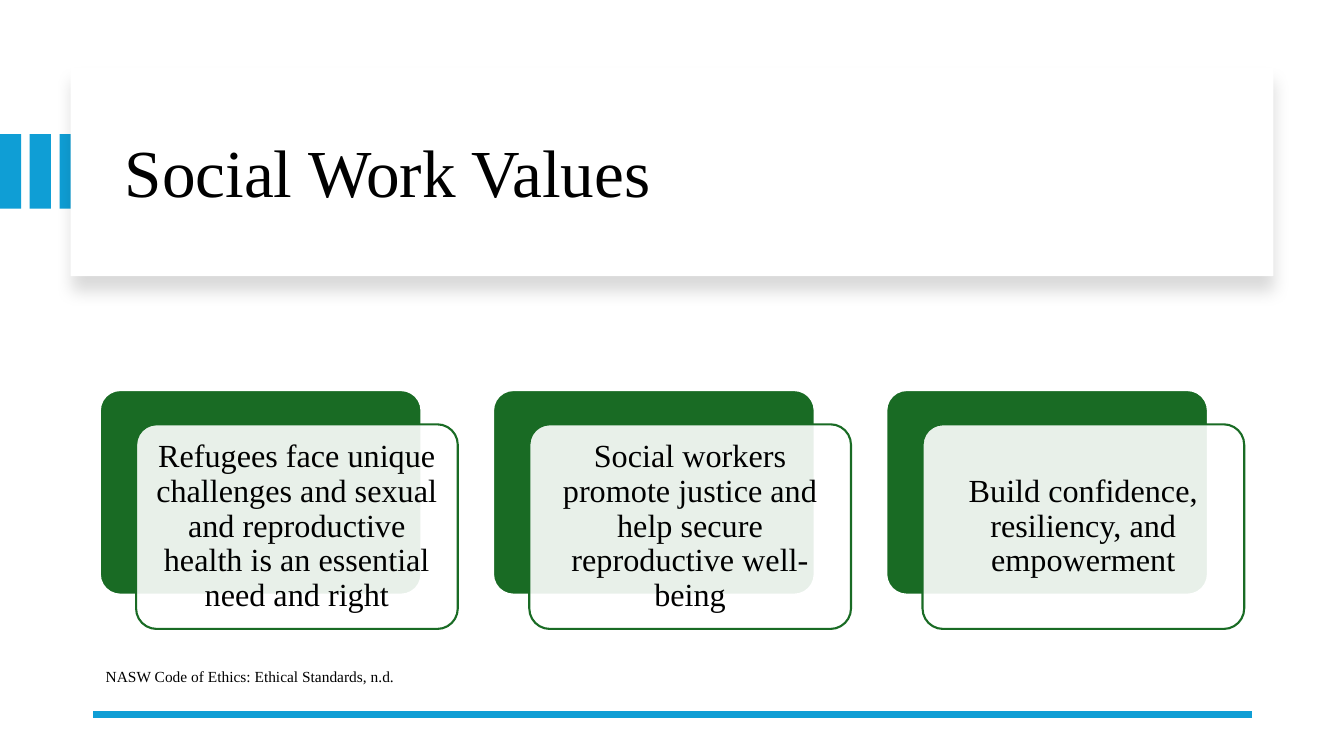
from lxml import etree
from pptx import Presentation
from pptx.dml.color import RGBColor
from pptx.enum.shapes import MSO_CONNECTOR, MSO_SHAPE
from pptx.enum.text import MSO_ANCHOR, MSO_AUTO_SIZE, PP_ALIGN
from pptx.oxml.ns import qn
from pptx.util import Inches, Pt

RECT, ROUNDED = MSO_SHAPE.RECTANGLE, MSO_SHAPE.ROUNDED_RECTANGLE
STRAIGHT = MSO_CONNECTOR.STRAIGHT
MIDDLE, TOP = MSO_ANCHOR.MIDDLE, MSO_ANCHOR.TOP
LEFT, CENTER = PP_ALIGN.LEFT, PP_ALIGN.CENTER
FIT_SHAPE = MSO_AUTO_SIZE.SHAPE_TO_FIT_TEXT

FONT = "Times New Roman"
COLORS = {"accent": "0F9ED5", "card": "196B24", "paper": "FFFFFF", "ink": "000000"}

# Grid, in inches
SLIDE_W, SLIDE_H = 13.33, 7.5
STRIPE_PITCH, STRIPE_TOP, STRIPE_W, STRIPE_H = 0.295, 1.33, 0.21, 0.74
CARD_LEFT, CARD_TOP, CARD_W, CARD_H = 0.99, 3.87, 3.19, 2.03
CARD_PITCH, CARD_SHIFT_X, CARD_SHIFT_Y = 3.9, 0.36, 0.34

VALUES = [
    "Refugees face unique challenges and sexual and reproductive health is an essential need and right",
    "Social workers promote justice and help secure reproductive well-being",
    "Build confidence, resiliency, and empowerment",
]


def color(name):
    return RGBColor.from_string(COLORS[name])


def box(*lengths):
    return [Inches(length) for length in lengths]


def set_format(target, values):
    for attribute, value in values.items():
        setattr(target, attribute, value)


def add_panel(shapes, kind, place, fill, line=None):
    panel = shapes.add_shape(kind, *box(*place))
    panel.shadow.inherit = False
    panel.fill.solid()
    panel.fill.fore_color.rgb = color(fill)
    if line:
        panel.line.color.rgb = color(line)
        panel.line.width = Pt(1.5)
    else:
        panel.line.fill.background()
    if kind == ROUNDED:
        panel.adjustments[0] = 0.1
    return panel


def write(holder, words, size, frame_format, paragraph_format):
    frame = holder.text_frame
    set_format(frame, frame_format)
    paragraph = frame.paragraphs[0]
    set_format(paragraph, paragraph_format)
    run = paragraph.add_run()
    set_format(run, {"text": words})
    set_format(run.font, {"name": FONT, "size": Pt(size)})
    run.font.color.rgb = color("ink")


def add_alpha(color_element, percent):
    etree.SubElement(color_element, qn("a:alpha"), val=str(percent * 1000))


def drop_shadow(panel):
    effects = panel._element.spPr.find(qn("a:effectLst"))
    shadow = etree.SubElement(
        effects, qn("a:outerShdw"), blurRad=str(Pt(11)), dist=str(Pt(10)),
        dir=str(90 * 60000), algn="t", rotWithShape="0")
    add_alpha(etree.SubElement(shadow, qn("a:srgbClr"), val=COLORS["ink"]), 15)


def add_stripes(slide):
    stripes = slide.shapes.add_group_shape().shapes
    for column in range(3):
        place = (column * STRIPE_PITCH, STRIPE_TOP, STRIPE_W, STRIPE_H)
        add_panel(stripes, RECT, place, "accent")


def add_title(slide, words):
    drop_shadow(add_panel(slide.shapes, RECT, (0.7, 0.67, 11.93, 2.07), "paper"))
    title = slide.shapes.add_textbox(*box(1.14, 0.89, 11.13, 1.7))
    write(title, words, 48, {"word_wrap": True, "vertical_anchor": MIDDLE},
          {"alignment": LEFT, "line_spacing": 0.9})


def add_rule(slide):
    rule = slide.shapes.add_connector(STRAIGHT, *box(12.42, 7.09, 0.92, 7.09))
    rule.line.color.rgb = color("accent")
    rule.line.width = Pt(4.5)
    etree.SubElement(rule._element.spPr, qn("a:effectLst"))


def add_card(cards, column, words):
    left = CARD_LEFT + column * CARD_PITCH
    add_panel(cards, ROUNDED, (left, CARD_TOP, CARD_W, CARD_H), "card", "paper")
    place = (left + CARD_SHIFT_X, CARD_TOP + CARD_SHIFT_Y, CARD_W, CARD_H)
    front = add_panel(cards, ROUNDED, place, "paper", "card")
    add_alpha(front._element.spPr.find(qn("a:solidFill"))[0], 90)
    margins = {f"margin_{side}": Inches(0.1) for side in ("left", "right", "top", "bottom")}
    write(front, words, 23, {"word_wrap": True, "vertical_anchor": MIDDLE, **margins},
          {"alignment": CENTER, "line_spacing": 0.9})


def add_source(slide, words):
    source = slide.shapes.add_textbox(*box(0.95, 6.57, 3.08, 0.29))
    write(source, words, 11,
          {"word_wrap": False, "auto_size": FIT_SHAPE, "vertical_anchor": TOP},
          {"alignment": LEFT})


def main():
    deck = Presentation()
    set_format(deck, {"slide_width": Inches(SLIDE_W), "slide_height": Inches(SLIDE_H)})
    slide = deck.slides.add_slide(deck.slide_layouts[6])

    # Header
    add_stripes(slide)
    add_title(slide, "Social Work Values")

    # Value cards
    cards = slide.shapes.add_group_shape().shapes
    for column, words in enumerate(VALUES):
        add_card(cards, column, words)

    # Footer
    add_rule(slide)
    add_source(slide, "NASW Code of Ethics: Ethical Standards, n.d.")
    deck.save("out.pptx")


if __name__ == "__main__":
    main()
